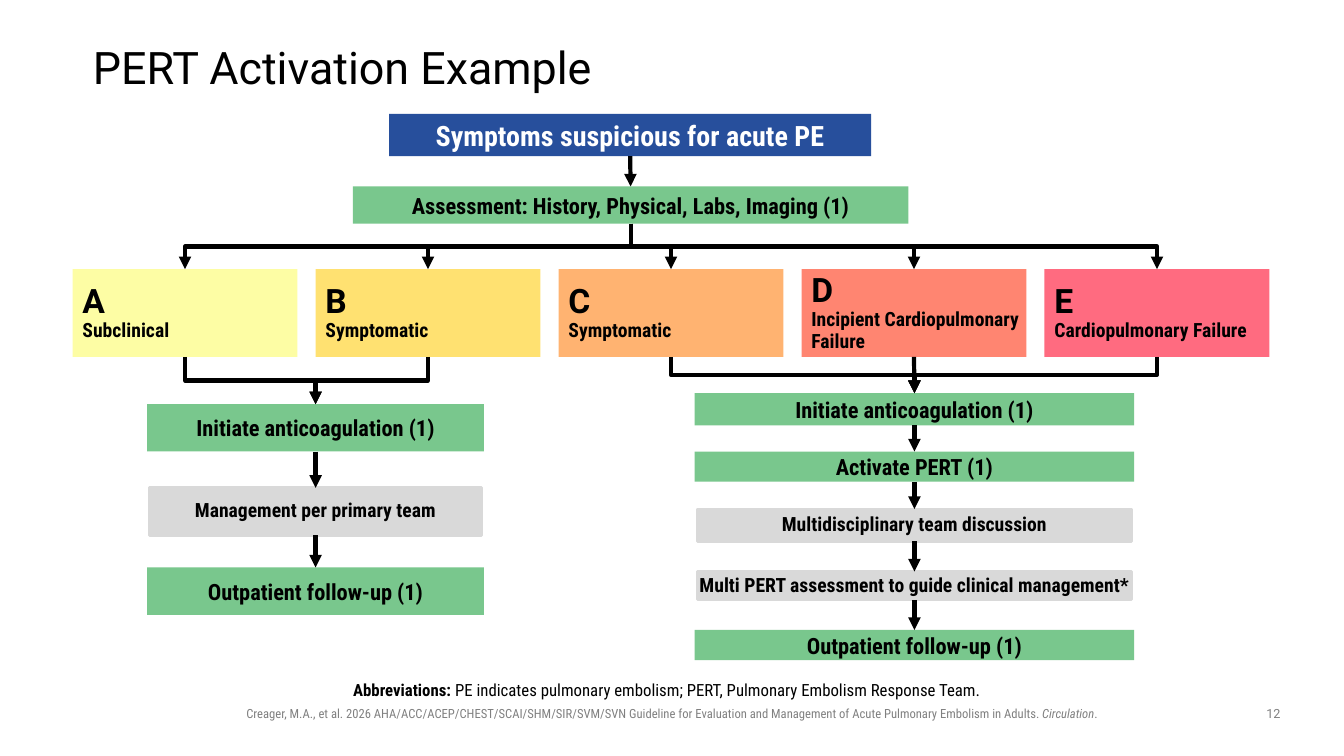
"""Build the PERT activation flowchart slide."""
from dataclasses import dataclass
from itertools import pairwise

from lxml.etree import SubElement
from pptx import Presentation
from pptx.dml.color import RGBColor
from pptx.enum.shapes import MSO_CONNECTOR, MSO_SHAPE
from pptx.enum.text import MSO_ANCHOR, PP_ALIGN
from pptx.oxml.ns import qn
from pptx.util import Inches, Pt


@dataclass(frozen=True)
class Theme:
    heading_font: str = "Roboto"
    body_font: str = "Roboto Condensed"
    black: str = "000000"
    white: str = "FFFFFF"
    muted: str = "808080"
    blue: str = "274F9C"
    green: str = "79C78D"
    grey: str = "D9D9D9"
    severity: tuple = ("FDFDA4", "FFE171", "FFB371", "FF8571", "FF6B80")
    title: int = 32
    letter: int = 24
    start: int = 20
    action: int = 16
    detail: int = 14
    note: int = 12
    footer: int = 9
    arrow: int = 3
    tight: float = 0.9


def assign(target, values):
    for name, value in values.items():
        setattr(target, name, value)


class FlowSlide:
    def __init__(self, deck, theme):
        self.theme = theme
        self.slide = deck.slides.add_slide(deck.slide_layouts[5])

    def place(self, shape, left, top, width, height):
        assign(shape, {"left": Inches(left), "top": Inches(top),
                       "width": Inches(width), "height": Inches(height)})

    def fill_text(self, frame, paragraphs, align=PP_ALIGN.LEFT, spacing=None,
                  insets=(0.1, 0.05, 0.1, 0.05), anchor=MSO_ANCHOR.MIDDLE):
        sides = ("margin_left", "margin_top", "margin_right", "margin_bottom")
        assign(frame, {"word_wrap": True, "vertical_anchor": anchor,
                       **dict(zip(sides, map(Inches, insets)))})
        for index, runs in enumerate(paragraphs):
            paragraph = frame.add_paragraph() if index else frame.paragraphs[0]
            assign(paragraph, {"alignment": align, "line_spacing": spacing})
            for words, color, values in runs:
                run = paragraph.add_run()
                run.text = words
                assign(run.font, {"name": self.theme.body_font, **values})
                run.font.color.rgb = RGBColor.from_string(color)

    def title(self, words, box):
        heading = self.slide.shapes.title
        self.place(heading, *box)
        style = {"name": self.theme.heading_font, "size": Pt(self.theme.title)}
        self.fill_text(heading.text_frame, [[(words, self.theme.black, style)]],
                       spacing=self.theme.tight, insets=(0, 0, 0, 0))

    def text(self, runs, box, **layout):
        caption = self.slide.shapes.add_textbox(*map(Inches, box))
        self.fill_text(caption.text_frame, [runs], align=PP_ALIGN.CENTER, **layout)

    def box(self, box, fill, paragraphs, outlined=False, **layout):
        step = self.slide.shapes.add_shape(MSO_SHAPE.RECTANGLE, *map(Inches, box))
        step.shadow.inherit = False
        step.fill.solid()
        step.fill.fore_color.rgb = RGBColor.from_string(fill)
        if outlined:
            step.line.color.rgb = RGBColor.from_string(fill)
            step.line.width = Pt(2)
        else:
            step.line.fill.background()
        self.fill_text(step.text_frame, paragraphs, **layout)
        return step

    def action(self, words, box, fill=None, color=None, size=None):
        style = {"size": Pt(size or self.theme.action), "bold": True}
        return self.box(box, fill or self.theme.green,
                        [[(words, color or self.theme.black, style)]],
                        align=PP_ALIGN.CENTER)

    def detail(self, words, box):
        style = {"size": Pt(self.theme.detail), "bold": True}
        return self.box(box, self.theme.grey, [[(words, self.theme.black, style)]],
                        outlined=True, align=PP_ALIGN.CENTER,
                        spacing=self.theme.tight, insets=(0, 0, 0, 0))

    def category(self, letter, words, box, fill):
        styles = ({"name": self.theme.heading_font, "size": Pt(self.theme.letter)},
                  {"size": Pt(self.theme.detail)})
        lines = [[(line, self.theme.black, {**style, "bold": True})]
                 for line, style in zip((letter, words), styles)]
        return self.box(box, fill, lines, spacing=self.theme.tight,
                        insets=(0.1, 0, 0, 0))

    def arrow(self, source, target, bent=False):
        kind = MSO_CONNECTOR.ELBOW if bent else MSO_CONNECTOR.STRAIGHT
        link = self.slide.shapes.add_connector(kind, 0, 0, 0, 0)
        link.begin_connect(source, 2)
        link.end_connect(target, 0)
        if bent:
            self.turn_downward(link)
        link.line.color.rgb = RGBColor.from_string(self.theme.black)
        link.line.width = Pt(self.theme.arrow)
        properties = link.element.spPr
        SubElement(properties.find(qn("a:ln")), qn("a:tailEnd"), type="triangle")
        SubElement(properties, qn("a:effectLst"))

    def turn_downward(self, link):
        across = link.end_x - link.begin_x
        down = link.end_y - link.begin_y
        middle_x = (link.begin_x + link.end_x) // 2
        middle_y = (link.begin_y + link.end_y) // 2
        frame = link.element.spPr.find(qn("a:xfrm"))
        frame.attrib.clear()
        assign(link, {"left": middle_x - down // 2,
                      "top": middle_y - abs(across) // 2,
                      "width": down, "height": abs(across)})
        frame.set("rot", "16200000" if across > 0 else "5400000")
        if across > 0:
            frame.set("flipH", "1")

    def chain(self, center, steps):
        boxes = [draw(words, (center - width / 2, top, width, height))
                 for draw, words, top, width, height in steps]
        for source, target in pairwise(boxes):
            self.arrow(source, target)
        return boxes[0]


def main():
    deck = Presentation()
    deck.slide_width, deck.slide_height = Inches(13.33), Inches(7.5)
    theme = Theme()
    flow = FlowSlide(deck, theme)
    flow.title("PERT Activation Example", (0.92, 0.33, 11.5, 0.72))

    symptoms = flow.action("Symptoms suspicious for acute PE", (3.86, 1.13, 4.78, 0.42),
                           theme.blue, theme.white, theme.start)
    assessment = flow.action("Assessment: History, Physical, Labs, Imaging (1)",
                             (3.5, 1.85, 5.51, 0.37))
    flow.arrow(symptoms, assessment)

    conditions = ("Subclinical", "Symptomatic", "Symptomatic",
                  "Incipient Cardiopulmonary Failure", "Cardiopulmonary Failure")
    categories = [
        flow.category(letter, words, (0.72 + 2.41 * column, 2.67, 2.23, 0.87), fill)
        for column, (letter, words, fill)
        in enumerate(zip("ABCDE", conditions, theme.severity))]
    for category in categories:
        flow.arrow(assessment, category, bent=True)

    primary_care = flow.chain(3.13, [
        (flow.action, "Initiate anticoagulation (1)", 4.01, 3.34, 0.47),
        (flow.detail, "Management per primary team", 4.84, 3.3, 0.47),
        (flow.action, "Outpatient follow-up (1)", 5.63, 3.34, 0.47)])
    response_team = flow.chain(9.07, [
        (flow.action, "Initiate anticoagulation (1)", 3.9, 4.36, 0.32),
        (flow.action, "Activate PERT (1)", 4.48, 4.36, 0.3),
        (flow.detail, "Multidisciplinary team discussion", 5.05, 4.31, 0.32),
        (flow.detail, "Multi PERT assessment to guide clinical management*",
         5.67, 4.31, 0.28),
        (flow.action, "Outpatient follow-up (1)", 6.25, 4.36, 0.3)])
    for column, category in enumerate(categories):
        pathway = primary_care if column < 2 else response_team
        flow.arrow(category, pathway, bent=column != 3)

    note = {"size": Pt(theme.note)}
    flow.text([("Abbreviations: ", theme.black, {**note, "bold": True}),
               ("PE indicates pulmonary embolism; PERT, Pulmonary Embolism "
                "Response Team.", theme.black, note)],
              (1.88, 6.54, 9.57, 0.46), spacing=theme.tight,
              insets=(0, 0.05, 0.1, 0.05), anchor=MSO_ANCHOR.BOTTOM)
    footer = {"size": Pt(theme.footer)}
    flow.text([("Creager, M.A., et al. 2026 AHA/ACC/ACEP/CHEST/SCAI/SHM/SIR/SVM/SVN "
                "Guideline for Evaluation and Management of Acute Pulmonary Embolism "
                "in Adults. ", theme.muted, footer),
               ("Circulation", theme.muted, {**footer, "italic": True}),
               (".", theme.muted, footer)],
              (2.23, 6.95, 8.87, 0.25), anchor=MSO_ANCHOR.TOP)
    flow.text([("12", theme.muted, {**footer, "name": theme.heading_font})],
              (12.42, 6.95, 0.42, 0.26), anchor=MSO_ANCHOR.TOP)
    deck.save("out.pptx")


if __name__ == "__main__":
    main()
